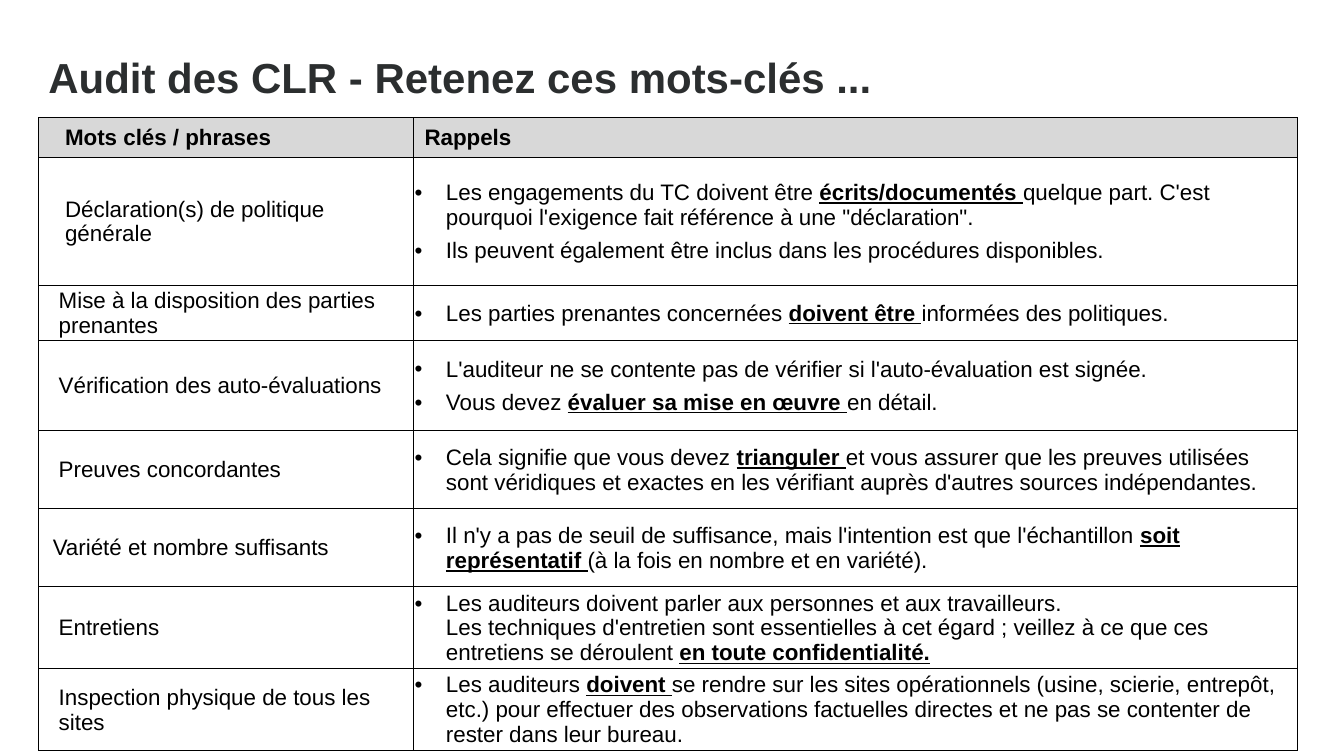
"""Builds a slide with a table of audit keywords and reminders."""
import pptx
import pptx.util
import pptx.dml.color
import pptx.enum.text
import lxml.etree
from pptx.oxml.ns import qn

Cm = pptx.util.Cm
Pt = pptx.util.Pt
MIDDLE = pptx.enum.text.MSO_ANCHOR.MIDDLE


def color(text):
    return pptx.dml.color.RGBColor.from_string(text)


def style(para, size, shade, bold):
    para.font.name = "Arial"
    para.font.size = Pt(size)
    para.font.color.rgb = color(shade)
    para.font.bold = bold


deck = pptx.Presentation()
deck.slide_width = Cm(33.87)
deck.slide_height = Cm(19.05)
slide = deck.slides.add_slide(deck.slide_layouts[6])

title = slide.shapes.add_textbox(Cm(0.97), Cm(1.04), Cm(29.24), Cm(1.93))
frame = title.text_frame
frame.word_wrap = True
frame.vertical_anchor = MIDDLE
para = frame.paragraphs[0]
para.text = "Audit des CLR - Retenez ces mots-clés ..."
para.line_spacing = 0.9
style(para, 30, "2B2E2F", True)

# Key, left margin in cm, row height in cm, reminders with *stressed* words
rows = [
    ("Mots clés / phrases", 0.64, 0.99, ["Rappels"]),
    ("Déclaration(s) de politique générale", 0.64, 3.23, [
        "Les engagements du TC doivent être *écrits/documentés *quelque part. "
        "C'est pourquoi l'exigence fait référence à une \"déclaration\".",
        "Ils peuvent également être inclus dans les procédures disponibles."]),
    ("Mise à la disposition des parties prenantes", 0.48, 1.28, [
        "Les parties prenantes concernées *doivent être *informées des politiques."]),
    ("Vérification des auto-évaluations", 0.48, 2.27, [
        "L'auditeur ne se contente pas de vérifier si l'auto-évaluation est signée.",
        "Vous devez *évaluer sa mise en œuvre *en détail."]),
    ("Preuves concordantes", 0.48, 1.97, [
        "Cela signifie que vous devez *trianguler *et vous assurer que les preuves "
        "utilisées sont véridiques et exactes en les vérifiant auprès d'autres "
        "sources indépendantes."]),
    ("Variété et nombre suffisants", 0.33, 1.97, [
        "Il n'y a pas de seuil de suffisance, mais l'intention est que "
        "l'échantillon *soit représentatif *(à la fois en nombre et en variété)."]),
    ("Entretiens", 0.48, 1.97, [
        "Les auditeurs doivent parler aux personnes et aux travailleurs. \n"
        "Les techniques d'entretien sont essentielles à cet égard ; veillez à ce "
        "que ces entretiens se déroulent *en toute confidentialité.*"]),
    ("Inspection physique de tous les sites", 0.48, 1.97, [
        "Les auditeurs *doivent *se rendre sur les sites opérationnels (usine, "
        "scierie, entrepôt, etc.) pour effectuer des observations factuelles "
        "directes et ne pas se contenter de rester dans leur bureau."]),
]

high = sum(row[2] for row in rows)
table = slide.shapes.add_table(
    len(rows), 2, Cm(0.97), Cm(2.97), Cm(31.72), Cm(high)).table
table.first_row = False
table.horz_banding = False
table.columns[0].width = Cm(9.45)
table.columns[1].width = Cm(22.27)

for i, (key, left, tall, notes) in enumerate(rows):
    table.rows[i].height = Cm(tall)
    head = i == 0
    for j, texts in enumerate([[key], notes]):
        cell = table.cell(i, j)
        cell.vertical_anchor = MIDDLE
        cell.margin_left = cell.margin_right = cell.margin_top = Cm(0.03)
        cell.margin_bottom = 0
        props = cell._tc.get_or_add_tcPr()
        for side in ("lnL", "lnR", "lnT", "lnB"):
            line = lxml.etree.SubElement(props, qn("a:" + side), w=str(Pt(0.75)))
            fill = lxml.etree.SubElement(line, qn("a:solidFill"))
            lxml.etree.SubElement(fill, qn("a:srgbClr"), val="000000")
        cell.fill.solid()
        cell.fill.fore_color.rgb = color("D8D8D8" if head else "FFFFFF")

        for n, text in enumerate(texts):
            frame = cell.text_frame
            para = frame.add_paragraph() if n else frame.paragraphs[0]
            props = para._p.get_or_add_pPr()
            bullet = j == 1 and not head
            if bullet:
                margin, indent = 0.79, -0.79
                shade = lxml.etree.SubElement(props, qn("a:buClr"))
                lxml.etree.SubElement(shade, qn("a:srgbClr"), val="000000")
                lxml.etree.SubElement(props, qn("a:buFont"), typeface="Arial")
                lxml.etree.SubElement(props, qn("a:buChar"), char="•")
            else:
                margin, indent = (0, 0.25) if j else (left, 0)
            props.set("marL", str(Cm(margin)))
            props.set("indent", str(Cm(indent)))
            if n:
                para.space_before = Pt(6)
            style(para, 16, "000000", head)
            for k, part in enumerate(text.split("*")):
                for m, words in enumerate(part.split("\n")):
                    if m:
                        para.add_line_break()
                    if words:
                        run = para.add_run()
                        run.text = words
                        if k % 2:
                            run.font.bold = True
                            run.font.underline = True

deck.save("out.pptx")
